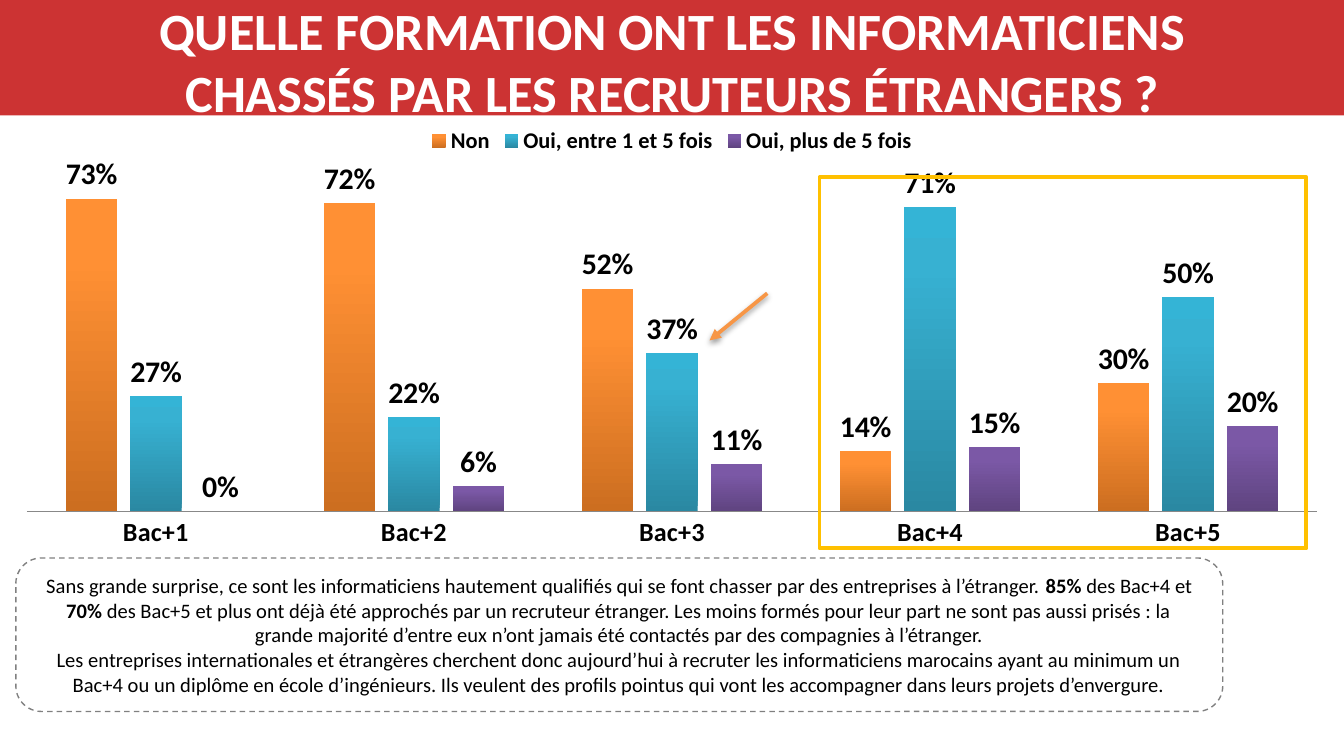
from dataclasses import dataclass

from lxml import etree
from pptx import Presentation
from pptx.chart.data import CategoryChartData
from pptx.dml.color import RGBColor
from pptx.enum.chart import XL_CHART_TYPE, XL_LABEL_POSITION, XL_LEGEND_POSITION, XL_TICK_MARK
from pptx.enum.dml import MSO_LINE
from pptx.enum.shapes import MSO_CONNECTOR, MSO_SHAPE
from pptx.enum.text import MSO_ANCHOR, MSO_AUTO_SIZE, PP_ALIGN
from pptx.oxml import parse_xml
from pptx.oxml.ns import qn
from pptx.util import Cm, Pt

COLUMNS = XL_CHART_TYPE.COLUMN_CLUSTERED
OUTSIDE_END = XL_LABEL_POSITION.OUTSIDE_END
LEGEND_TOP = XL_LEGEND_POSITION.TOP
NO_TICK = XL_TICK_MARK.NONE
DASH = MSO_LINE.DASH
STRAIGHT = MSO_CONNECTOR.STRAIGHT
RECTANGLE = MSO_SHAPE.RECTANGLE
ROUNDED = MSO_SHAPE.ROUNDED_RECTANGLE
MIDDLE = MSO_ANCHOR.MIDDLE
NO_FIT = MSO_AUTO_SIZE.NONE
CENTER = PP_ALIGN.CENTER
DRAWING = "http://schemas.openxmlformats.org/drawingml/2006/main"
TITLE_ONLY = 5


@dataclass(frozen=True)
class Theme:
    font: str = "Calibri"
    banner: str = "CC3333"
    light: str = "FFFFFF"
    ink: str = "000000"
    axis: str = "888888"
    border: str = "808080"
    highlight: str = "FFC000"
    arrow: str = "F79646"
    title_size: int = 28
    label_size: int = 16
    category_size: int = 14
    legend_size: int = 12
    body_size: int = 11


THEME = Theme()
TITLE = "QUELLE FORMATION ONT LES INFORMATICIENS CHASSÉS PAR LES RECRUTEURS ÉTRANGERS ?"
LEVELS = ["Bac+1", "Bac+2", "Bac+3", "Bac+4", "Bac+5"]
ANSWERS = [
    ("Non", (0.73, 0.72, 0.52, 0.14, 0.3), ("CC6E20", "FF9034", "FF9136")),
    ("Oui, entre 1 et 5 fois", (0.27, 0.22, 0.37, 0.71, 0.5), ("2A88A2", "37B1D2", "34B4D6")),
    ("Oui, plus de 5 fois", (0, 0.06, 0.11, 0.15, 0.2), ("5F4480", "7B58A6", "7C57A8")),
]
COMMENTS = [
    [
        ("Sans grande surprise, ce sont les informaticiens hautement qualifiés qui se font "
         "chasser par des entreprises à l’étranger. ", False),
        ("85% ", True),
        ("des Bac+4 et ", False),
        ("70% ", True),
        ("des Bac+5 et plus ont déjà été approchés par un recruteur étranger. Les moins formés "
         "pour leur part ne sont pas aussi prisés : la grande majorité d’entre eux n’ont jamais "
         "été contactés par des compagnies à l’étranger.", False),
    ],
    [
        ("Les entreprises internationales et étrangères cherchent donc aujourd’hui à recruter les "
         "informaticiens marocains ayant au minimum un Bac+4 ou un diplôme en école d’ingénieurs. "
         "Ils veulent des profils pointus qui vont les accompagner dans leurs projets "
         "d’envergure.", False),
    ],
]


def style_font(font, size, color=THEME.ink, bold=True):
    font.name = THEME.font
    font.size = Pt(size)
    font.bold = bold
    font.color.rgb = RGBColor.from_string(color)


def style_line(line, color, width):
    line.color.rgb = RGBColor.from_string(color)
    line.width = Pt(width)


def add_box(page, kind, left, top, width, height):
    box = page.shapes.add_shape(kind, Cm(left), Cm(top), Cm(width), Cm(height))
    box.shadow.inherit = False
    box.fill.background()
    box.line.fill.background()
    return box


def add_banner(page):
    banner = add_box(page, RECTANGLE, 0, 0, 25.4, 2.18)
    banner.fill.solid()
    banner.fill.fore_color.rgb = RGBColor.from_string(THEME.banner)
    page.shapes.title.element.addprevious(banner.element)


def fill_title(page):
    title = page.shapes.title
    title.left, title.top, title.width, title.height = Cm(1.27), Cm(-0.05), Cm(22.86), Cm(2.39)
    frame = title.text_frame
    frame.text = TITLE
    frame.word_wrap = True
    frame.auto_size = NO_FIT
    frame.vertical_anchor = MIDDLE
    para = frame.paragraphs[0]
    para.alignment = CENTER
    style_font(para.runs[0].font, THEME.title_size, THEME.light)


def fill_series(series, colors):
    stops = "".join(
        f'<a:gs pos="{place * 1000}"><a:srgbClr val="{color}"/></a:gs>'
        for place, color in zip((0, 80, 100), colors)
    )
    gradient = (
        f'<a:gradFill xmlns:a="{DRAWING}" rotWithShape="1"><a:gsLst>{stops}</a:gsLst>'
        '<a:lin ang="16200000" scaled="0"/></a:gradFill>'
    )
    series.format.fill.background()
    properties = series._element.get_or_add_spPr()
    properties.replace(properties.find(qn("a:noFill")), parse_xml(gradient))


def label_series(series):
    labels = series.data_labels
    labels.show_value = True
    labels.number_format = "0%"
    labels.number_format_is_linked = False
    labels.position = OUTSIDE_END
    style_font(labels.font, THEME.label_size)


def add_answer_chart(page):
    data = CategoryChartData(number_format="0%")
    data.categories = LEVELS
    for name, values, _ in ANSWERS:
        data.add_series(name, values)
    chart = page.shapes.add_chart(COLUMNS, 0, Cm(2.13), Cm(25.4), Cm(8.41), data).chart
    style_font(chart.font, THEME.legend_size)
    chart.has_title = False
    chart.has_legend = True
    chart.legend.position = LEGEND_TOP
    chart.legend.include_in_layout = False
    style_font(chart.legend.font, THEME.legend_size)

    levels = chart.category_axis
    levels.major_tick_mark = NO_TICK
    style_line(levels.format.line, THEME.axis, 0.75)
    style_font(levels.tick_labels.font, THEME.category_size)
    shares = chart.value_axis
    shares.visible = False
    shares.has_major_gridlines = False
    shares.minimum_scale, shares.maximum_scale = 0, 0.8

    plot = chart.plots[0]
    plot.gap_width, plot.overlap = 150, -25
    plot.vary_by_categories = False
    for series, (_, _, colors) in zip(plot.series, ANSWERS):
        fill_series(series, colors)
        label_series(series)


def add_comments(page):
    box = add_box(page, ROUNDED, 0.3, 10.54, 22.81, 2.9)
    style_line(box.line, THEME.border, 0.75)
    box.line.dash_style = DASH
    frame = box.text_frame
    frame.word_wrap = True
    frame.vertical_anchor = MIDDLE
    for index, spans in enumerate(COMMENTS):
        para = frame.add_paragraph() if index else frame.paragraphs[0]
        para.alignment = CENTER
        for text, bold in spans:
            span = para.add_run()
            span.text = text
            style_font(span.font, THEME.body_size, bold=bold)


def add_highlight(page):
    frame = add_box(page, RECTANGLE, 15.49, 3.35, 9.2, 7.01)
    style_line(frame.line, THEME.highlight, 2)


def add_arrow(page):
    arrow = page.shapes.add_connector(STRAIGHT, Cm(14.5), Cm(5.54), Cm(13.41), Cm(6.43))
    style_line(arrow.line, THEME.arrow, 2)
    etree.SubElement(arrow.line._get_or_add_ln(), qn("a:tailEnd"), type="triangle")
    effects = etree.SubElement(arrow.element.spPr, qn("a:effectLst"))
    shadow = etree.SubElement(
        effects, qn("a:outerShdw"), blurRad=str(Pt(3.1)), dist=str(Pt(1.6)), dir="5400000"
    )
    color = etree.SubElement(shadow, qn("a:srgbClr"), val=THEME.ink)
    etree.SubElement(color, qn("a:alpha"), val="38000")


def main():
    deck = Presentation()
    deck.slide_width, deck.slide_height = Cm(25.4), Cm(14.28)
    page = deck.slides.add_slide(deck.slide_layouts[TITLE_ONLY])
    add_banner(page)
    fill_title(page)
    add_answer_chart(page)
    add_comments(page)
    add_highlight(page)
    add_arrow(page)
    deck.save("out.pptx")


if __name__ == "__main__":
    main()
